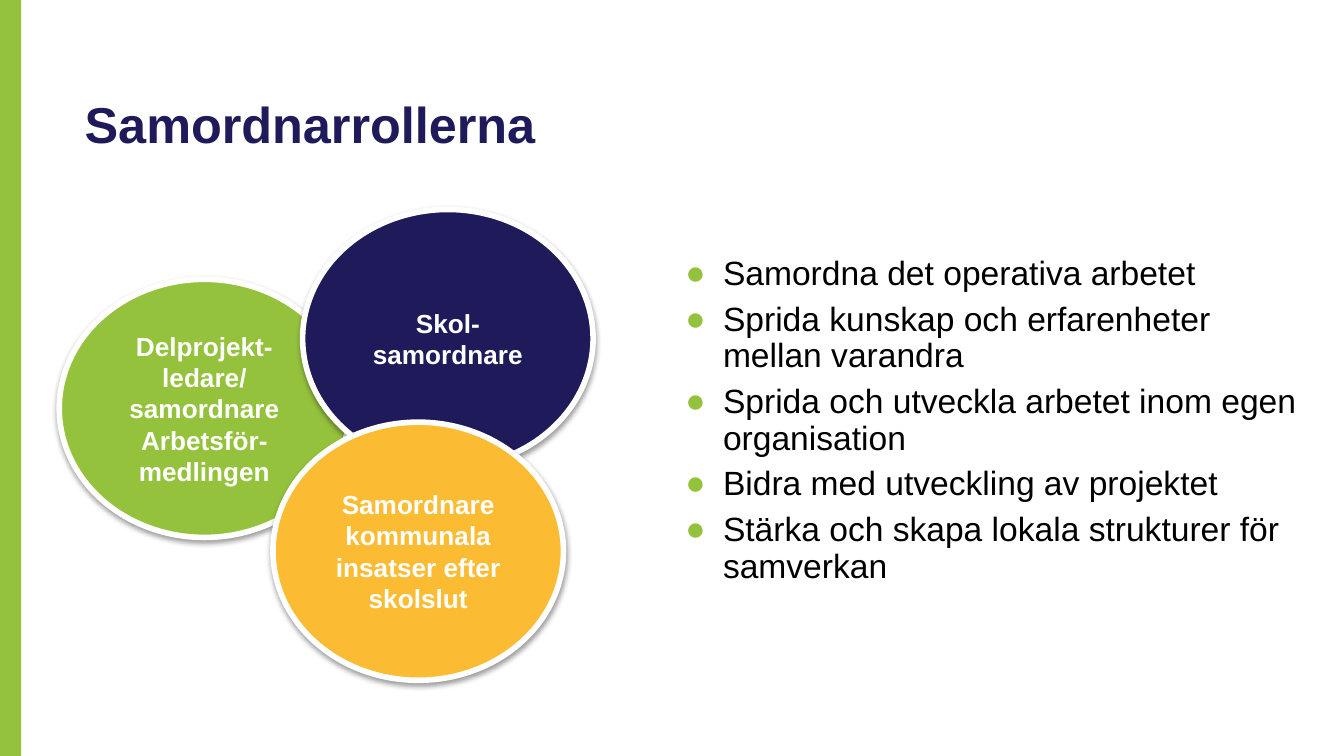
from dataclasses import dataclass

from lxml import etree
from pptx import Presentation
from pptx.dml.color import RGBColor
from pptx.enum.shapes import MSO_SHAPE
from pptx.enum.text import MSO_ANCHOR, MSO_AUTO_SIZE, PP_ALIGN
from pptx.oxml.ns import qn
from pptx.shapes.autoshape import Shape
from pptx.slide import Slide
from pptx.text.text import Font
from pptx.util import Cm, Pt

OVAL, RECTANGLE = MSO_SHAPE.OVAL, MSO_SHAPE.RECTANGLE
TOP, MIDDLE, BOTTOM = MSO_ANCHOR.TOP, MSO_ANCHOR.MIDDLE, MSO_ANCHOR.BOTTOM
LEFT, CENTER = PP_ALIGN.LEFT, PP_ALIGN.CENTER
NO_AUTOFIT = MSO_AUTO_SIZE.NONE


@dataclass(frozen=True)
class Theme:
    """Colours, font and type sizes of the slide."""

    green: str = "95C23D"
    navy: str = "1F1B5A"
    yellow: str = "FBBC33"
    white: str = "FFFFFF"
    black: str = "000000"
    font: str = "Arial"
    title_size: float = 27
    list_size: float = 18
    role_size: float = 14


@dataclass(frozen=True)
class Role:
    """A coordinator role shown as an oval, placed in centimetres."""

    text: str
    left: float
    top: float
    color: str


THEME = Theme()
ROLE_WIDTH, ROLE_HEIGHT = Cm(5.49), Cm(4.88)
BULLET_INDENT = Cm(0.71)
ROLES = (
    Role("Delprojekt-ledare/\vsamordnare Arbetsför-medlingen", 1.12, 5.28, THEME.green),
    Role("Skol-samordnare", 5.72, 3.96, THEME.navy),
    Role("Samordnare kommunala insatser efter skolslut", 5.16, 7.98, THEME.yellow),
)
TASKS = (
    "Samordna det operativa arbetet",
    "Sprida kunskap och erfarenheter mellan varandra",
    "Sprida och utveckla arbetet inom egen organisation",
    "Bidra med utveckling av projektet",
    "Stärka och skapa lokala strukturer för samverkan",
)


def style_font(font: Font, size: float, color: str, bold: bool) -> None:
    """Apply the theme font with a size, colour and weight."""
    font.name, font.size, font.bold = THEME.font, Pt(size), bold
    font.color.rgb = RGBColor.from_string(color)


def place(shape: Shape, left: float, top: float, width: float, height: float) -> None:
    """Move and size a shape, in centimetres."""
    shape.left, shape.top = Cm(left), Cm(top)
    shape.width, shape.height = Cm(width), Cm(height)


def add_shadow(shape: Shape) -> None:
    """Give a shape a soft shadow straight below it."""
    shape.shadow.inherit = False
    effects = shape.element.spPr.find(qn("a:effectLst"))
    shadow = etree.SubElement(
        effects, qn("a:outerShdw"), blurRad=str(Pt(3.1)), dist=str(Pt(1.6)),
        dir="5400000", rotWithShape="0",
    )
    color = etree.SubElement(shadow, qn("a:srgbClr"), val=THEME.black)
    etree.SubElement(color, qn("a:alpha"), val="38000")


def add_bar(slide: Slide, height: int) -> None:
    """Draw the green bar along the left edge."""
    bar = slide.shapes.add_shape(RECTANGLE, 0, 0, Cm(0.4), height)
    bar.shadow.inherit = False
    bar.fill.solid()
    bar.fill.fore_color.rgb = RGBColor.from_string(THEME.green)
    bar.line.fill.background()


def add_role(slide: Slide, role: Role) -> None:
    """Draw one role as a labelled oval."""
    oval = slide.shapes.add_shape(OVAL, Cm(role.left), Cm(role.top), ROLE_WIDTH, ROLE_HEIGHT)
    oval.fill.solid()
    oval.fill.fore_color.rgb = RGBColor.from_string(role.color)
    oval.line.color.rgb = RGBColor.from_string(THEME.white)
    oval.line.width = Pt(3)
    add_shadow(oval)
    frame = oval.text_frame
    frame.word_wrap = True
    frame.vertical_anchor = MIDDLE
    frame.text = role.text
    para = frame.paragraphs[0]
    para.alignment = CENTER
    style_font(para.font, THEME.role_size, THEME.white, True)


def fill_title(title: Shape, text: str) -> None:
    """Place and format the slide title."""
    place(title, 1.6, 1.02, 20.62, 1.88)
    frame = title.text_frame
    frame.auto_size = NO_AUTOFIT
    frame.vertical_anchor = BOTTOM
    frame.margin_left = frame.margin_right = frame.margin_top = frame.margin_bottom = 0
    frame.text = text
    para = frame.paragraphs[0]
    para.alignment = LEFT
    style_font(para.font, THEME.title_size, THEME.navy, True)


def fill_list(body: Shape, items: tuple[str, ...]) -> None:
    """Place the body and write its bulleted items."""
    place(body, 12.7, 4.72, 12.07, 6.5)
    frame = body.text_frame
    frame.auto_size = NO_AUTOFIT
    frame.vertical_anchor = TOP
    frame.text = "\n".join(items)
    for index, para in enumerate(frame.paragraphs):
        properties = para._p.get_or_add_pPr()
        properties.set("marL", str(BULLET_INDENT))
        properties.set("indent", str(-BULLET_INDENT))
        bullet_color = etree.SubElement(properties, qn("a:buClr"))
        etree.SubElement(bullet_color, qn("a:srgbClr"), val=THEME.green)
        etree.SubElement(properties, qn("a:buFont"), typeface=THEME.font)
        etree.SubElement(properties, qn("a:buChar"), char="●")
        para.line_spacing = 0.9
        para.space_before = Pt(5.2 if index else 0)
        style_font(para.font, THEME.list_size, THEME.black, False)


def main() -> None:
    """Build and save the slide."""
    deck = Presentation()
    deck.slide_width, deck.slide_height = Cm(25.4), Cm(14.29)
    slide = deck.slides.add_slide(deck.slide_layouts[1])
    add_bar(slide, deck.slide_height)
    fill_title(slide.shapes.title, "Samordnarrollerna")
    fill_list(slide.placeholders[1], TASKS)
    for role in ROLES:
        add_role(slide, role)
    deck.save("out.pptx")


if __name__ == "__main__":
    main()
